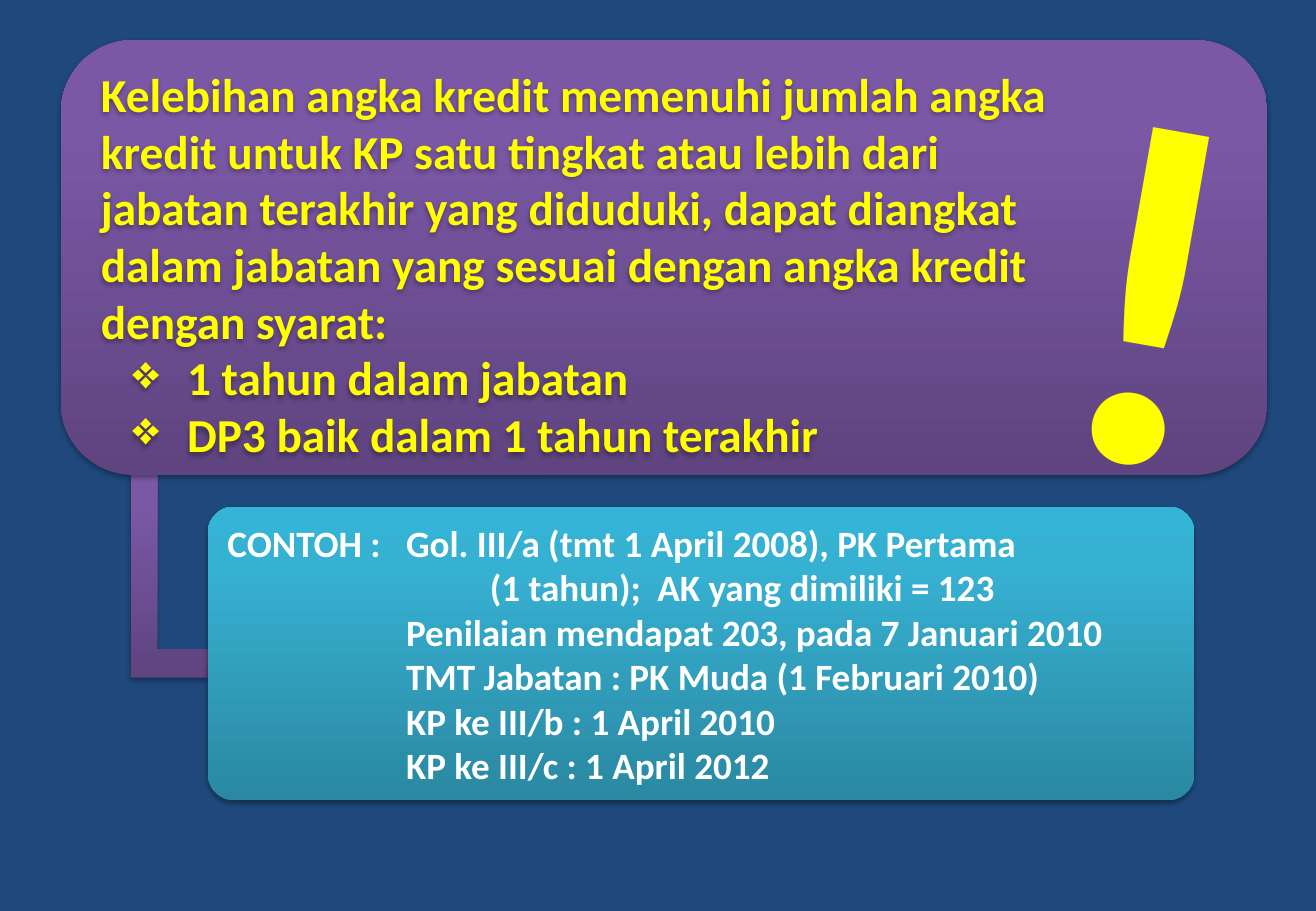
import pptx
import pptx.dml.color
import pptx.enum.shapes
import pptx.enum.text
import pptx.oxml
import pptx.oxml.ns
import pptx.util
from dataclasses import dataclass
from typing import Optional

Inches = pptx.util.Inches
Pt = pptx.util.Pt
SHAPE = pptx.enum.shapes.MSO_SHAPE
ANCHOR = pptx.enum.text.MSO_ANCHOR

COLORS = {
    "navy": "1F497D", "yellow": "FFFF00", "white": "FFFFFF", "shadow": "000000",
    "purple_dark": "5F4480", "purple": "7B58A6", "purple_light": "7C57A8",
    "teal_dark": "2A88A2", "teal": "37B1D2", "teal_light": "34B4D6",
}
PURPLE = ("purple_dark", "purple", "purple_light")
TEAL = ("teal_dark", "teal", "teal_light")
STOPS = (0, 80, 100)
FONT = "Calibri"
CONTOH_INDENT = 1.47


@dataclass
class Panel:
    kind: pptx.enum.shapes.MSO_SHAPE
    left: float
    top: float
    width: float
    height: float
    gradient: Optional[tuple[str, str, str]] = None
    adjustments: tuple[float, ...] = ()


@dataclass
class Line:
    text: str
    margin: float = 0
    indent: float = 0
    bullet: str = ""
    tab: float = 0


def rgb(name: str) -> pptx.dml.color.RGBColor:
    return pptx.dml.color.RGBColor.from_string(COLORS[name])


def element(tag: str, attributes: str = "", content: str = ""):
    return pptx.oxml.parse_xml(
        f"<a:{tag} {pptx.oxml.ns.nsdecls('a')} {attributes}>{content}</a:{tag}>")


def draw_panel(slide, panel: Panel):
    shape = slide.shapes.add_shape(
        panel.kind, Inches(panel.left), Inches(panel.top),
        Inches(panel.width), Inches(panel.height))
    for index, value in enumerate(panel.adjustments):
        shape.adjustments[index] = value
    shape.line.fill.background()
    shape.fill.background()
    properties = shape._element.spPr
    if panel.gradient:
        stops = "".join(
            f'<a:gs pos="{stop * 1000}"><a:srgbClr val="{COLORS[name]}"/></a:gs>'
            for stop, name in zip(STOPS, panel.gradient))
        no_fill = properties.find(pptx.oxml.ns.qn("a:noFill"))
        properties.replace(no_fill, element(
            "gradFill", 'rotWithShape="1"',
            f'<a:gsLst>{stops}</a:gsLst><a:lin ang="16200000" scaled="0"/>'))
    properties.append(element(
        "effectLst", "",
        f'<a:outerShdw blurRad="{Pt(3.1)}" dist="{Pt(1.8)}" '
        f'dir="5400000" rotWithShape="0"><a:srgbClr val="{COLORS["shadow"]}">'
        '<a:alpha val="35000"/></a:srgbClr></a:outerShdw>'))
    return shape


def write_lines(shape, lines: list[Line], size: float, color: str) -> None:
    frame = shape.text_frame
    for index, line in enumerate(lines):
        paragraph = frame.paragraphs[0] if index == 0 else frame.add_paragraph()
        paragraph.text = line.text
        paragraph.alignment = pptx.enum.text.PP_ALIGN.LEFT
        properties = paragraph._p.get_or_add_pPr()
        properties.set("marL", str(Inches(line.margin)))
        properties.set("indent", str(Inches(line.indent)))
        if line.bullet:
            properties.append(element("buChar", f'char="{line.bullet}"'))
        if line.tab:
            properties.append(element(
                "tabLst", "", f'<a:tab pos="{Inches(line.tab)}" algn="l"/>'))
        paragraph.font.name = FONT
        paragraph.font.size = Pt(size)
        paragraph.font.bold = True
        paragraph.font.color.rgb = rgb(color)


def main() -> None:
    deck = pptx.Presentation()
    deck.slide_width, deck.slide_height = Inches(10.83), Inches(7.5)
    slide = deck.slides.add_slide(deck.slide_layouts[6])
    slide.background.fill.solid()
    slide.background.fill.fore_color.rgb = rgb("navy")

    draw_panel(slide, Panel(SHAPE.CORNER, 1.08, 3.75, 0.63, 1.83, PURPLE, (0.37, 0.34)))
    draw_panel(slide, Panel(SHAPE.ROUNDED_RECTANGLE, 0.5, 0.33, 9.93, 3.58, PURPLE))

    rule = draw_panel(slide, Panel(SHAPE.ROUNDED_RECTANGLE, 0.5, 0.42, 8.5, 3.5))
    rule.text_frame.word_wrap = True
    rule.text_frame.vertical_anchor = ANCHOR.MIDDLE
    rule.text_frame.margin_left = Inches(0.16)
    write_lines(rule, [
        Line("Kelebihan angka kredit memenuhi jumlah angka kredit untuk KP satu "
             "tingkat atau lebih dari jabatan terakhir yang diduduki, dapat diangkat "
             "dalam jabatan yang sesuai dengan angka kredit dengan syarat:"),
        *(Line(condition, 0.71, -0.45, "❖") for condition in (
            "1 tahun dalam jabatan", "DP3 baik dalam 1 tahun terakhir")),
    ], 28, "yellow")

    example = draw_panel(slide, Panel(
        SHAPE.ROUNDED_RECTANGLE, 1.71, 4.17, 8.12, 2.42, TEAL, (0.09,)))
    example.text_frame.word_wrap = True
    example.text_frame.vertical_anchor = ANCHOR.MIDDLE
    write_lines(example, [
        Line("CONTOH :\tGol. III/a (tmt 1 April 2008), PK Pertama",
             CONTOH_INDENT, -CONTOH_INDENT, tab=CONTOH_INDENT),
        Line("(1 tahun);  AK yang dimiliki = 123", CONTOH_INDENT + 0.69),
        *(Line(step, CONTOH_INDENT) for step in (
            "Penilaian mendapat 203, pada 7 Januari 2010",
            "TMT Jabatan : PK Muda (1 Februari 2010)",
            "KP ke III/b : 1 April 2010",
            "KP ke III/c : 1 April 2012")),
    ], 22, "white")

    exclamation = slide.shapes.add_textbox(
        Inches(8.76), Inches(-0.25), Inches(1.53), Inches(4.98))
    exclamation.rotation = 10
    exclamation.text_frame.word_wrap = False
    exclamation.text_frame.auto_size = pptx.enum.text.MSO_AUTO_SIZE.SHAPE_TO_FIT_TEXT
    write_lines(exclamation, [Line("!")], 290, "yellow")

    deck.save("out.pptx")


if __name__ == "__main__":
    main()
